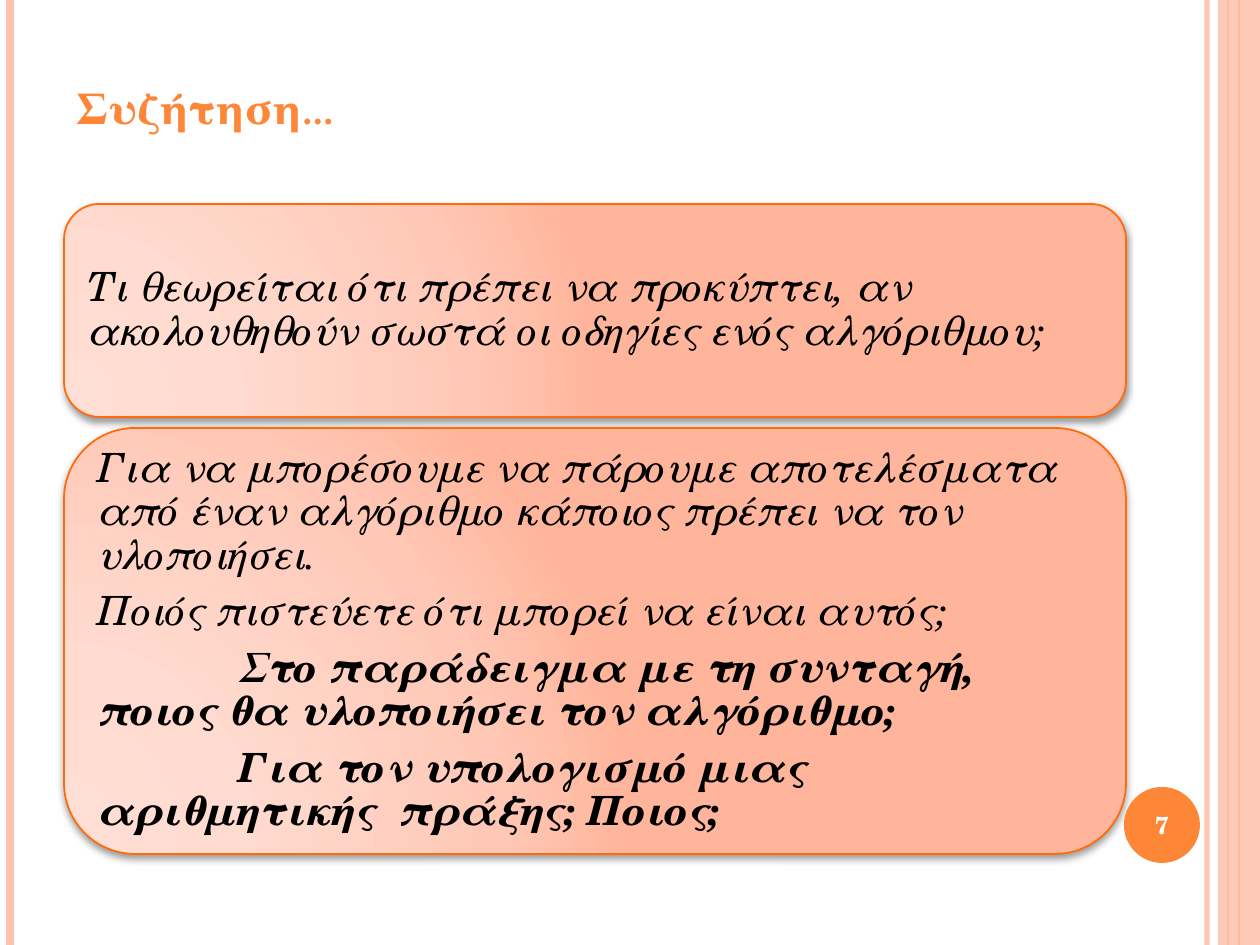
import pptx
import pptx.util
import pptx.dml.color
import pptx.enum.shapes
import pptx.enum.text
import pptx.oxml
import pptx.oxml.ns

RGB = pptx.dml.color.RGBColor
SHAPE = pptx.enum.shapes.MSO_SHAPE
ANCHOR = pptx.enum.text.MSO_ANCHOR
ALIGN = pptx.enum.text.PP_ALIGN
qn = pptx.oxml.ns.qn
NS = pptx.oxml.ns.nsdecls("a")

FONT = "TeX Gyre Schola"
ORANGE = RGB(0xFE, 0x86, 0x37)
PEACH = RGB(0xFE, 0xC3, 0xAE)
CARD_LINE = RGB(0xFF, 0x6B, 0x0A)
BLACK = RGB(0, 0, 0)
WHITE = RGB(0xFF, 0xFF, 0xFF)
CARD_STOPS = [
    (0, RGB(0xFF, 0xDE, 0xD5)),
    (30, RGB(0xFF, 0xDB, 0xD0)),
    (75, RGB(0xFF, 0xC8, 0xB6)),
    (100, RGB(0xFF, 0xB5, 0x9B)),
]

WIDTH, HEIGHT = 1260, 945
SCALE = 914400 / 126
CARD_LEFT, CARD_WIDTH = 64, 1062
TAB = 141

# Paragraphs are lists of (text, bold) runs
CARDS = [  # top, height, paragraphs
    (204, 213, [
        [("Τι θεωρείται ότι πρέπει να προκύπτει, αν ακολουθηθούν σωστά "
          "οι οδηγίες ενός αλγόριθμου;", False)],
    ]),
    (428, 426, [
        [("Για να μπορέσουμε να πάρουμε αποτελέσματα από έναν αλγόριθμο "
          "κάποιος πρέπει να τον υλοποιήσει.", False)],
        [("Ποιός πιστεύετε ότι μπορεί να είναι αυτός;", False)],
        [("\tΣ", False),
         ("το παράδειγμα με τη συνταγή, ποιος θα υλοποιήσει τον αλγόριθμο;", True)],
        [("\tΓια τον υπολογισμό μιας αριθμητικής  πράξης; Ποιος;", True)],
    ]),
]
STRIPES = [  # x, colour, points, opacity
    (1207, PEACH, 3, 93),
    (10, PEACH, 4.5, 100),
    (1239, ORANGE, 1.5, 100),
    (1228, ORANGE, 0.75, 100),
]


def px(n):
    return pptx.util.Emu(round(n * SCALE))


def set_opacity(parent, percent):
    color = next(parent.iter(qn("a:srgbClr")))
    color.append(pptx.oxml.parse_xml(f'<a:alpha {NS} val="{percent * 1000}"/>'))


def add_run(p, text, size=23, color=BLACK, bold=False, italic=False):
    r = p.add_run()
    r.text = text
    r.font.name, r.font.size = FONT, pptx.util.Pt(size)
    r.font.bold, r.font.italic = bold, italic
    r.font.color.rgb = color


def set_frame(tf, anchor, inset_x, inset_y):
    tf.word_wrap = True
    tf.auto_size = pptx.enum.text.MSO_AUTO_SIZE.NONE
    tf.vertical_anchor = anchor
    tf.margin_left = tf.margin_right = px(inset_x)
    tf.margin_top = tf.margin_bottom = px(inset_y)


def add_shape(slide, kind, left, top, width, height, color):
    s = slide.shapes.add_shape(kind, px(left), px(top), px(width), px(height))
    s.shadow.inherit = False
    s.fill.solid()
    s.fill.fore_color.rgb = color
    s.line.fill.background()
    return s


def add_stripe(slide, x, color, points, opacity):
    line = slide.shapes.add_connector(
        pptx.enum.shapes.MSO_CONNECTOR.STRAIGHT, px(x), 0, px(x), px(HEIGHT))
    line.line.color.rgb = color
    line.line.width = pptx.util.Pt(points)
    if opacity < 100:
        set_opacity(line._element.spPr, opacity)
    line._element.spPr.append(pptx.oxml.parse_xml(f"<a:effectLst {NS}/>"))


def add_card(slide, top, height, paragraphs):
    s = add_shape(slide, SHAPE.ROUNDED_RECTANGLE, CARD_LEFT, top, CARD_WIDTH, height, WHITE)
    s.line.color.rgb = CARD_LINE
    s.line.width = pptx.util.Pt(1)
    spPr = s._element.spPr
    stops = "".join(f'<a:gs pos="{pos * 1000}"><a:srgbClr val="{color}"/></a:gs>'
                    for pos, color in CARD_STOPS)
    spPr.replace(spPr.find(qn("a:solidFill")), pptx.oxml.parse_xml(
        f'<a:gradFill {NS} rotWithShape="1"><a:gsLst>{stops}</a:gsLst><a:path path="circle">'
        '<a:fillToRect l="5000" t="100000" r="120000" b="10000"/></a:path></a:gradFill>'))
    spPr.find(qn("a:effectLst")).append(pptx.oxml.parse_xml(
        f'<a:outerShdw {NS} blurRad="50800" dist="25400" dir="5400000" rotWithShape="0">'
        '<a:srgbClr val="000000"><a:alpha val="40000"/></a:srgbClr></a:outerShdw>'))

    tf = s.text_frame
    set_frame(tf, ANCHOR.MIDDLE, 13, 13)
    for i, runs in enumerate(paragraphs):
        p = tf.paragraphs[0] if i == 0 else tf.add_paragraph()
        p.alignment = ALIGN.LEFT
        p.line_spacing = 0.9
        p.space_after = pptx.util.Pt(7.5)
        if runs[0][0].startswith("\t"):
            p._p.get_or_add_pPr().append(pptx.oxml.parse_xml(
                f'<a:tabLst {NS}><a:tab pos="{px(TAB)}" algn="l"/></a:tabLst>'))
        for text, bold in runs:
            add_run(p, text, bold=bold, italic=True)


def main():
    prs = pptx.Presentation()
    prs.slide_width, prs.slide_height = px(WIDTH), px(HEIGHT)
    slide = prs.slides.add_slide(prs.slide_layouts[5])

    for stripe in STRIPES:
        add_stripe(slide, *stripe)
    band = add_shape(slide, SHAPE.RECTANGLE, 1218, 0, 42, HEIGHT, PEACH)
    set_opacity(band._element.spPr, 87)

    title = slide.shapes.title
    title.left, title.top, title.width, title.height = px(64), px(76), px(476), px(63)
    set_frame(title.text_frame, ANCHOR.TOP, 13, 6)
    p = title.text_frame.paragraphs[0]
    p.alignment = ALIGN.LEFT
    add_run(p, "Συζήτηση", size=24, color=ORANGE, bold=True)
    add_run(p, "…", size=18, color=ORANGE, bold=True)

    for card in CARDS:
        add_card(slide, *card)

    badge = add_shape(slide, SHAPE.OVAL, 1124, 787, 76, 76, ORANGE)
    set_frame(badge.text_frame, ANCHOR.MIDDLE, 0, 0)
    p = badge.text_frame.paragraphs[0]
    p.alignment = ALIGN.CENTER
    add_run(p, "7", size=14, color=WHITE, bold=True)

    prs.save("out.pptx")


if __name__ == "__main__":
    main()
